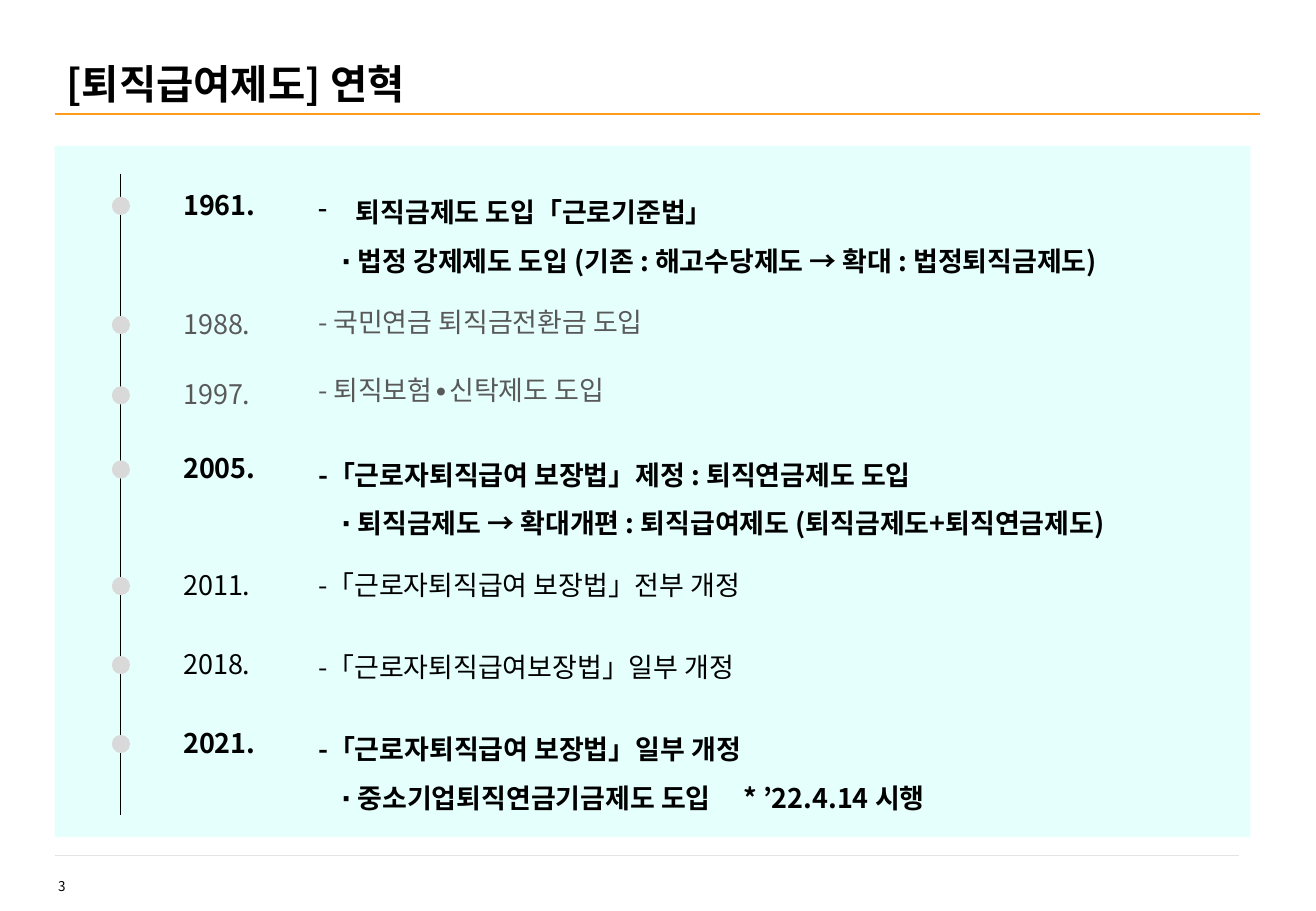
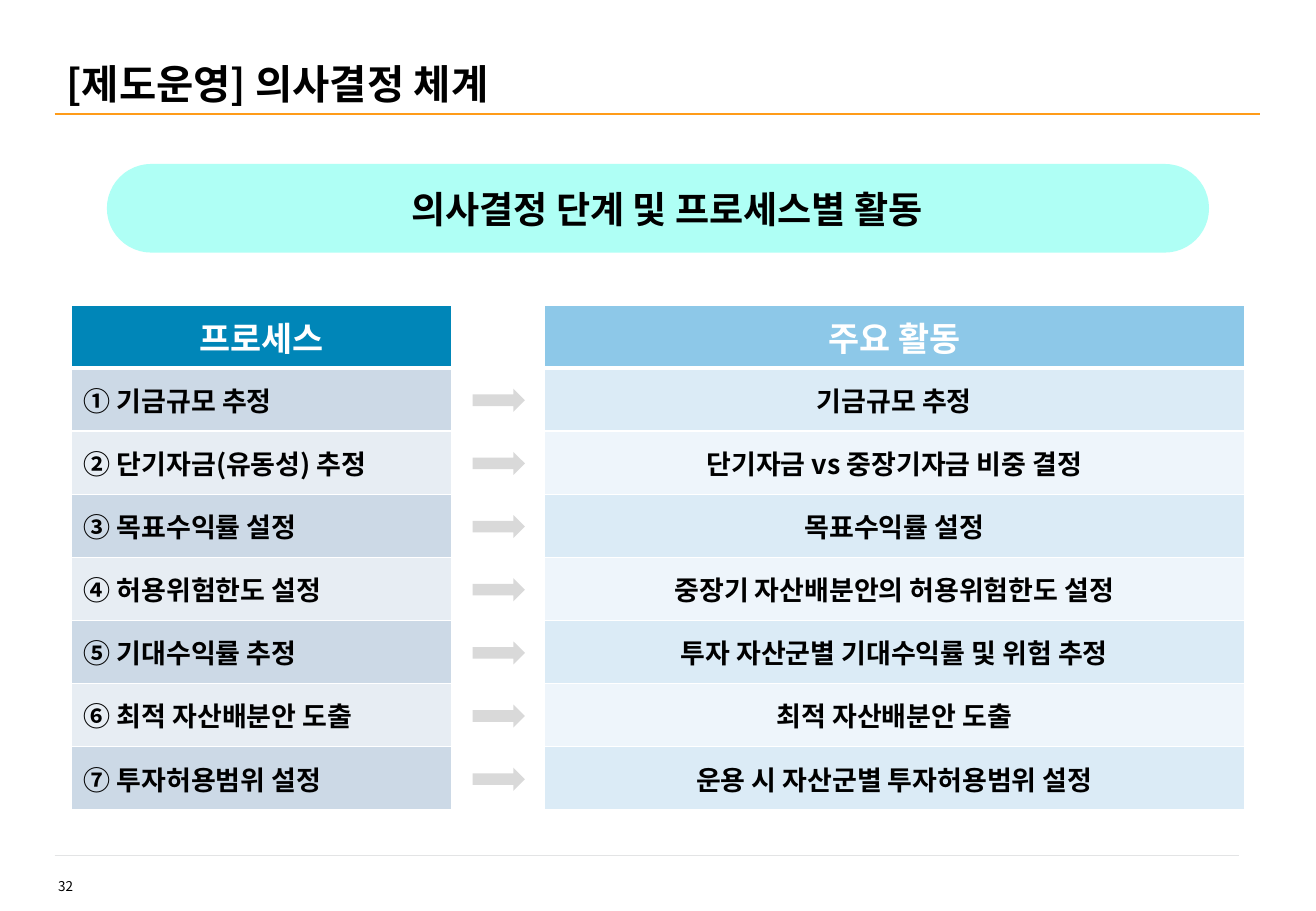
"""Build two slides on retirement benefits: a history and a decision process."""
import lxml.etree
import pptx
import pptx.dml.color
import pptx.enum.shapes
import pptx.enum.text
import pptx.oxml.ns
import pptx.util

Inches = pptx.util.Inches
Shapes = pptx.enum.shapes.MSO_SHAPE
Align = pptx.enum.text.PP_ALIGN
Anchor = pptx.enum.text.MSO_ANCHOR
FONT = "Noto Sans CJK KR"
BLACK, WHITE, GRAY, SILVER = "000000", "FFFFFF", "595959", "D9D9D9"
ORANGE, RULE, PALE, MINT = "FF9C19", "E3E4E5", "E5FFFC", "AFFFF5"


def color(code):
    return pptx.dml.color.RGBColor.from_string(code)


def node(parent, tag, **attrs):
    name = pptx.oxml.ns.qn("a:" + tag)
    return lxml.etree.SubElement(parent, name, {k: str(v) for k, v in attrs.items()})


def write(para, text, size=16, ink=BLACK, bold=False, align=Align.LEFT,
          space=None, first=0, bullet=None, tab=None):
    para.alignment = align
    if space:
        para.line_spacing = space
    props = para._p.get_or_add_pPr()
    props.set("marL", str(Inches(-first) if bullet else 0))
    props.set("indent", str(Inches(first)))
    if bullet:
        node(props, "buFontTx")
        node(props, "buChar", char=bullet)
    else:
        node(props, "buNone")
    if tab:
        node(node(props, "tabLst"), "tab", pos=Inches(tab), algn="l")
    run = para.add_run()
    run.text = text
    font = run.font
    font.name, font.size, font.bold = FONT, pptx.util.Pt(size), bold
    font.color.rgb = color(ink)
    node(font._element, "ea", typeface=FONT)


class Deck:
    def __init__(self):
        self.file = pptx.Presentation()
        self.file.slide_width = Inches(10.83)
        self.file.slide_height = Inches(7.5)
        self.slide = None

    def page(self, title, number):
        self.slide = self.file.slides.add_slide(self.file.slide_layouts[6])
        self.line(0.45, 0.94, 10.37, 0.94, ORANGE, 1.25)
        self.line(0.45, 7.04, 10.2, 7.04, RULE, 0.25)
        frame = self.box(0.45, 0.46, 9.94, 0.45, Anchor.MIDDLE)
        write(frame.paragraphs[0], title, size=24, bold=True)
        frame = self.box(0.38, 7.18, 4.36, 0.3)
        write(frame.paragraphs[0], number, size=8)

    def line(self, x1, y1, x2, y2, ink, width):
        line = self.slide.shapes.add_connector(
            pptx.enum.shapes.MSO_CONNECTOR.STRAIGHT,
            Inches(x1), Inches(y1), Inches(x2), Inches(y2))
        line.line.color.rgb = color(ink)
        line.line.width = pptx.util.Pt(width)
        node(line._element.spPr, "effectLst")

    def shape(self, kind, x, y, w, h, fill):
        shape = self.slide.shapes.add_shape(
            kind, Inches(x), Inches(y), Inches(w), Inches(h))
        shape.shadow.inherit = False
        shape.fill.solid()
        shape.fill.fore_color.rgb = color(fill)
        shape.line.fill.background()
        return shape

    def box(self, x, y, w, h, anchor=Anchor.TOP):
        frame = self.slide.shapes.add_textbox(
            Inches(x), Inches(y), Inches(w), Inches(h)).text_frame
        frame.word_wrap = True
        frame.vertical_anchor = anchor
        return frame

    def table(self, x, y, w, row, texts, fills, align):
        grid = self.slide.shapes.add_table(
            len(texts), 1, Inches(x), Inches(y), Inches(w),
            Inches(row * len(texts))).table
        for i, text in enumerate(texts):
            cell = grid.cell(i, 0)
            head = i == 0
            self.edge(cell, top=3 if i == 1 else 1, base=3 if head else 1)
            cell.fill.solid()
            cell.fill.fore_color.rgb = color(fills[0] if head else fills[2 - i % 2])
            cell.vertical_anchor = Anchor.MIDDLE
            write(cell.text_frame.paragraphs[0], text, bold=True,
                  size=20 if head else 16, ink=WHITE if head else BLACK,
                  align=Align.CENTER if head else align)
            if head:
                fills = (fills[0], fills[1], fills[2])

    def edge(self, cell, top, base):
        props = cell._tc.get_or_add_tcPr()
        for side, width in (("L", 1), ("R", 1), ("T", top), ("B", base)):
            line = node(props, "ln" + side, w=pptx.util.Pt(width))
            node(node(line, "solidFill"), "srgbClr", val=WHITE)


EVENTS = [
    (1.62, 1.43, "1961.", BLACK, True, 1.5,
     ["퇴직금제도 도입「근로기준법」",
      "∙ 법정 강제제도 도입 (기존 : 해고수당제도 → 확대 : 법정퇴직금제도)"]),
    (2.6, 2.47, "1988.", GRAY, False, None, ["- 국민연금 퇴직금전환금 도입"]),
    (3.18, 3.03, "1997.", GRAY, False, None, ["- 퇴직보험∙신탁제도 도입"]),
    (3.79, 3.59, "2005.", BLACK, True, 1.5,
     ["-「근로자퇴직급여 보장법」제정 : 퇴직연금제도 도입",
      "∙ 퇴직금제도 → 확대개편 : 퇴직급여제도 (퇴직금제도+퇴직연금제도)"]),
    (4.75, 4.63, "2011.", BLACK, False, None, ["-「근로자퇴직급여 보장법」전부 개정"]),
    (5.4, 5.25, "2018.", BLACK, False, 1.2, ["-「근로자퇴직급여보장법」일부 개정"]),
    (6.05, 5.85, "2021.", BLACK, True, 1.5,
     ["-「근로자퇴직급여 보장법」일부 개정",
      "∙ 중소기업퇴직연금기금제도 도입\t* ’22.4.14 시행"]),
]
STEPS = [
    ("프로세스", "주요 활동"),
    ("① 기금규모 추정", "기금규모 추정"),
    ("② 단기자금(유동성) 추정", "단기자금 vs 중장기자금 비중 결정"),
    ("③ 목표수익률 설정", "목표수익률 설정"),
    ("④ 허용위험한도 설정", "중장기 자산배분안의 허용위험한도 설정"),
    ("⑤ 기대수익률 추정", "투자 자산군별 기대수익률 및 위험 추정"),
    ("⑥ 최적 자산배분안 도출", "최적 자산배분안 도출"),
    ("⑦ 투자허용범위 설정", "운용 시 자산군별 투자허용범위 설정"),
]


def history(deck):
    deck.page("[퇴직급여제도] 연혁", "3")
    deck.shape(Shapes.RECTANGLE, 0.45, 1.2, 9.84, 5.69, PALE)
    deck.line(0.99, 1.43, 0.99, 6.71, BLACK, 0.75)
    for dot, top, year, ink, bold, space, lines in EVENTS:
        deck.shape(Shapes.OVAL, 0.92, dot, 0.15, 0.15, SILVER)
        frame = deck.box(1.41, dot - 0.12, 0.9, 0.37)
        write(frame.paragraphs[0], year, ink=ink, bold=bold)
        frame = deck.box(2.52, top, 7.6, 0.85 if len(lines) > 1 else 0.37)
        for i, text in enumerate(lines):
            para = frame.add_paragraph() if i else frame.paragraphs[0]
            marks = {"-": {}, "∙": {"first": 0.19, "tab": 3.49}}
            style = marks.get(text[0], {"first": -0.31, "bullet": "-"})
            write(para, text, ink=ink, bold=bold, space=space, **style)


def process(deck):
    deck.page("[제도운영] 의사결정 체계", "32")
    pill = deck.shape(Shapes.ROUNDED_RECTANGLE, 0.88, 1.35, 9.07, 0.73, MINT)
    pill.adjustments[0] = 0.5
    frame = pill.text_frame
    frame.vertical_anchor = Anchor.MIDDLE
    frame.margin_left, frame.margin_right = Inches(0.15), 0
    write(frame.paragraphs[0], "의사결정 단계 및 프로세스별 활동",
          size=22, bold=True, align=Align.CENTER)
    top, row = 2.51, 0.52
    tasks, acts = zip(*STEPS)
    deck.table(0.59, top, 3.13, row, tasks, ("0086B8", "CCD9E6", "E7EDF3"), Align.LEFT)
    deck.table(4.48, top, 5.76, row, acts, ("8DC8E8", "DBEBF6", "EEF5FB"), Align.CENTER)
    for i in range(1, len(STEPS)):
        deck.shape(Shapes.RIGHT_ARROW, 3.89, top + row * i + 0.17, 0.43, 0.19, SILVER)


def main():
    deck = Deck()
    history(deck)
    process(deck)
    deck.file.save("out.pptx")


if __name__ == "__main__":
    main()
